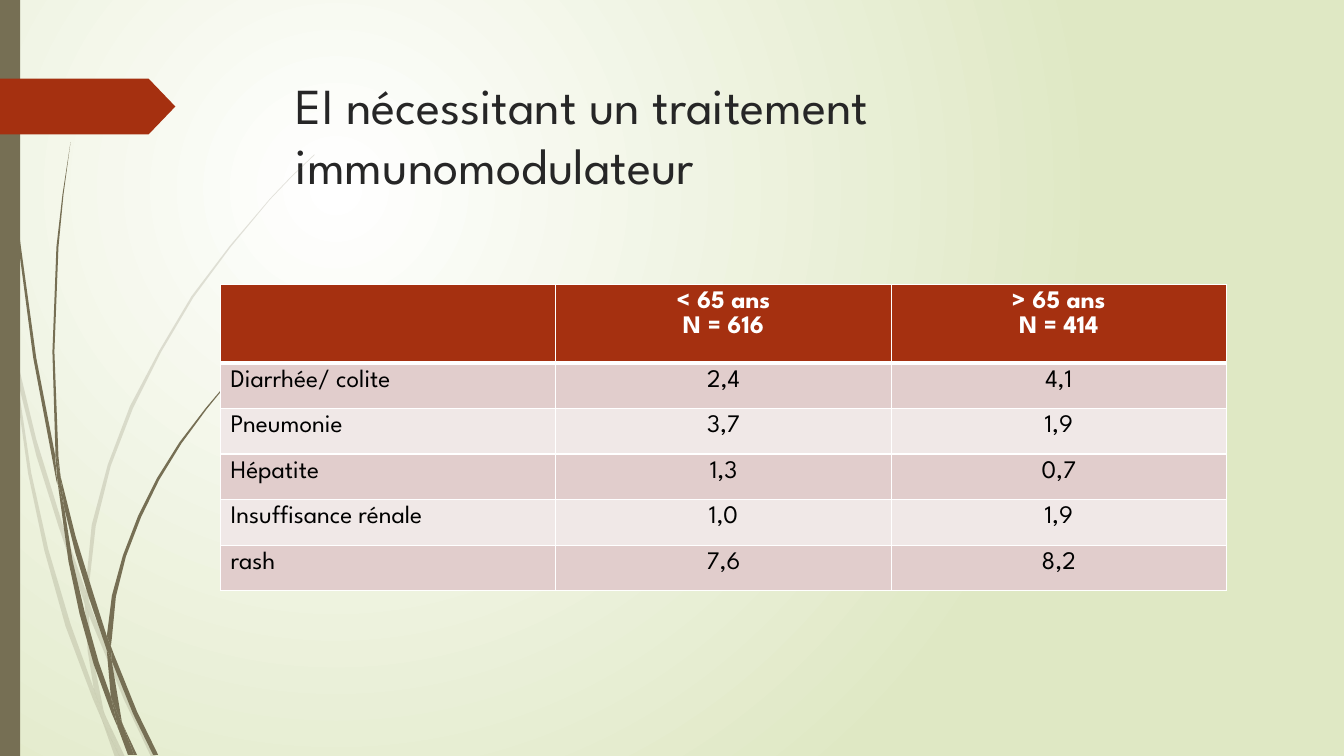
from dataclasses import dataclass

from lxml.etree import SubElement
from pptx import Presentation
from pptx.dml.color import RGBColor
from pptx.enum.shapes import MSO_SHAPE
from pptx.enum.text import MSO_ANCHOR, PP_ALIGN
from pptx.oxml.ns import qn
from pptx.util import Cm, Pt

FONT = "League Spartan"
OLIVE, RUST, WHITE, BLACK = "766F54", "A53010", "FFFFFF", "000000"
BANDS = ("E1CDCC", "F0E8E7")
GRID = 2.54  # centimetres per unit of the grass outlines


@dataclass
class Grass:
    """Tuft of blades; each blade is a closed outline of x, y points."""
    opacity: int
    blades: list[list[tuple[float, float]]]


PALE_GRASS = Grass(20, [
    [(.11, 3.5), (.09, 3.22), (0, 2.82), (0, 2.99), (.1, 3.44)],
    [(.58, 5.22), (.84, 5.99), (.85, 5.86), (.62, 5.2), (.36, 4.36), (.14, 3.45),
     (.17, 3.76), (.36, 4.52)],
    [(.92, 6.07), (.88, 5.96), (.88, 6.1), (1.23, 6.94), (1.5, 7.51), (1.55, 7.51),
     (1.27, 6.92)],
    [(1.19, 7.51), (1.24, 7.51), (1.05, 7.11)],
    [(.93, 6.83), (.7, 6.19), (.48, 5.45), (.31, 4.69), (.17, 3.76), (.11, 3.5),
     (.28, 4.7), (.44, 5.46), (.65, 6.21), (.92, 6.93), (1.01, 7.14), (.99, 7.07)],
    [(.84, 5.99), (.87, 6.46), (.93, 6.83), (.96, 6.92), (1.05, 7.11), (1.03, 7.06),
     (.91, 6.46), (.88, 6.1), (.88, 6.08)],
    [(.88, 5.84), (.95, 5.22), (1.1, 4.62), (1.32, 4.05), (1.6, 3.49), (1.92, 2.95),
     (2.29, 2.45), (2.68, 1.98), (2.9, 1.75), (3.12, 1.54), (3.12, 1.53), (2.89, 1.75),
     (2.68, 1.97), (2.28, 2.44), (1.9, 2.94), (1.58, 3.48), (1.29, 4.03), (1.07, 4.61),
     (.91, 5.21), (.85, 5.84), (.85, 5.86), (.88, 5.96)],
    [(1.01, 7.14), (1.14, 7.51), (1.19, 7.51)],
    [(.88, 6.08), (.88, 6.1), (.88, 5.96), (.85, 5.86), (.84, 5.99)],
    [(.96, 6.92), (.93, 6.83), (.99, 7.07), (1.01, 7.14), (1.19, 7.51), (1.05, 7.11)],
])

DARK_GRASS = Grass(100, [
    [(.07, 1.1), (.17, 2.33), (.33, 3.55), (.56, 4.77), (.57, 4.81), (.55, 4.57),
     (.55, 4.53), (.36, 3.55), (.19, 2.32), (.08, 1.09), (.05, .48), (.04, 0),
     (.03, 0), (.04, .48)],
    [(.88, 5.92), (1.06, 6.45), (1.06, 6.31), (.93, 5.9), (.75, 5.32), (.6, 4.72),
     (.64, 5.05), (.75, 5.49)],
    [(1.13, 6.49), (1.1, 6.41), (1.11, 6.56), (1.32, 7.08), (1.52, 7.49), (1.57, 7.49),
     (1.36, 7.06)],
    [(1.1, 6.91), (.98, 6.57), (.84, 6.07), (.72, 5.56), (.64, 5.05), (.57, 4.77),
     (.68, 5.57), (.79, 6.09), (.93, 6.59), (1.11, 7.08), (1.17, 7.22), (1.16, 7.17)],
    [(.6, 4.72), (.58, 4.53), (.54, 3.49), (.58, 2.45), (.63, 1.93), (.7, 1.41),
     (.62, 1.93), (.56, 2.45), (.52, 3.49), (.55, 4.49)],
    [(1.33, 7.49), (1.36, 7.49), (1.22, 7.19)],
    [(.57, 4.77), (.64, 5.05), (.6, 4.72), (.55, 4.49), (.55, 4.53)],
    [(1.11, 6.33), (1.15, 5.92), (1.25, 5.52), (1.4, 5.13), (1.58, 4.76), (1.8, 4.4),
     (2.05, 4.06), (2.31, 3.74), (2.45, 3.59), (2.61, 3.44), (2.6, 3.44), (2.45, 3.58),
     (2.31, 3.73), (2.04, 4.05), (1.78, 4.39), (1.56, 4.74), (1.37, 5.12), (1.22, 5.51),
     (1.11, 5.91), (1.06, 6.31), (1.1, 6.41)],
    [(1.17, 7.22), (1.27, 7.49), (1.31, 7.49)],
    [(1.06, 6.45), (1.1, 6.91), (1.16, 7.06), (1.22, 7.19), (1.21, 7.16), (1.11, 6.56),
     (1.09, 6.51)],
    [(1.06, 6.45), (1.09, 6.51), (1.11, 6.56), (1.1, 6.41), (1.06, 6.31)],
    [(1.16, 7.06), (1.1, 6.91), (1.16, 7.17), (1.17, 7.22), (1.3, 7.49), (1.33, 7.49),
     (1.22, 7.19)],
])

ADVERSE_EVENTS = [
    ("", "< 65 ans\nN = 616", "> 65 ans\nN = 414"),
    ("Diarrhée/ colite", "2,4", "4,1"),
    ("Pneumonie", "3,7", "1,9"),
    ("Hépatite", "1,3", "0,7"),
    ("Insuffisance rénale", "1,0", "1,9"),
    ("rash", "7,6", "8,2"),
]


def rgb(code: str) -> RGBColor:
    return RGBColor.from_string(code)


def paint(shape, color: str, opacity: int = 100) -> None:
    """Give a shape a flat fill without line or shadow."""
    shape.shadow.inherit = False
    shape.line.fill.background()
    shape.fill.solid()
    shape.fill.fore_color.rgb = rgb(color)
    if opacity < 100:
        tint = shape.element.spPr.find(qn("a:solidFill"))[0]
        SubElement(tint, qn("a:alpha"), val=str(opacity * 1000))


def format_runs(paragraph, size: int, color: str, bold: bool = False) -> None:
    for run in paragraph.runs:
        run.font.name, run.font.size, run.font.bold = FONT, Pt(size), bold
        run.font.color.rgb = rgb(color)


def draw_grass(slide, grass: Grass) -> None:
    for blade in grass.blades:
        outline = [(Cm(x * GRID), Cm(y * GRID)) for x, y in blade]
        builder = slide.shapes.build_freeform(*outline[0])
        builder.add_line_segments(outline[1:], close=True)
        paint(builder.convert_to_shape(), OLIVE, grass.opacity)


def fill_background(slide) -> None:
    fill = slide.background.fill
    fill.gradient()
    for stop, color, position in zip(fill.gradient_stops, (WHITE, "DFE8C4"), (0, 1)):
        stop.color.rgb, stop.position = rgb(color), position
    gradient = slide.element.find(".//" + qn("a:gradFill"))
    gradient.remove(gradient.find(qn("a:lin")))
    circle = SubElement(gradient, qn("a:path"), {"path": "circle"})
    SubElement(circle, qn("a:fillToRect"), l="50000", t="50000", r="100000", b="100000")


def draw_borders(cell, bottom: float) -> None:
    properties = cell._tc.get_or_add_tcPr()
    for side, width in (("L", 1), ("R", 1), ("T", 1), ("B", bottom)):
        line = SubElement(properties, qn(f"a:ln{side}"), w=str(Pt(width)))
        SubElement(SubElement(line, qn("a:solidFill")), qn("a:srgbClr"), val=WHITE)


def add_event_table(slide) -> None:
    rows, columns = len(ADVERSE_EVENTS), len(ADVERSE_EVENTS[0])
    table = slide.shapes.add_table(
        rows, columns, Cm(5.56), Cm(7.17), Cm(25.35), Cm(7.7)).table
    table.first_row = table.horz_banding = False
    for column in table.columns:
        column.width = Cm(8.45)
    for r, values in enumerate(ADVERSE_EVENTS):
        header = r == 0
        table.rows[r].height = Cm(1.97 if header else 1.15)
        for c, value in enumerate(values):
            cell = table.cell(r, c)
            draw_borders(cell, 3 if header else 1)
            cell.fill.solid()
            cell.fill.fore_color.rgb = rgb(RUST if header else BANDS[(r - 1) % 2])
            cell.text_frame.text = value
            for paragraph in cell.text_frame.paragraphs:
                paragraph.alignment = PP_ALIGN.CENTER if c else PP_ALIGN.LEFT
                paragraph.line_spacing = 1.07
                format_runs(paragraph, 18, WHITE if header else BLACK, header)


def add_title(slide) -> None:
    title = slide.shapes.title
    title.left, title.top, title.width, title.height = (
        Cm(7.2), Cm(1.73), Cm(24.77), Cm(3.56))
    frame = title.text_frame
    frame.text = "EI nécessitant un traitement immunomodulateur"
    frame.word_wrap = True
    frame.vertical_anchor = MSO_ANCHOR.TOP
    frame.paragraphs[0].alignment = PP_ALIGN.LEFT
    format_runs(frame.paragraphs[0], 36, "262626")


def main() -> None:
    deck = Presentation()
    deck.slide_width, deck.slide_height = Cm(33.87), Cm(19.05)
    slide = deck.slides.add_slide(deck.slide_layouts[5])
    fill_background(slide)
    for grass in (PALE_GRASS, DARK_GRASS):
        draw_grass(slide, grass)
    side_bar = slide.shapes.add_shape(
        MSO_SHAPE.RECTANGLE, 0, 0, Cm(0.51), deck.slide_height)
    paint(side_bar, OLIVE)
    page_tag = slide.shapes.add_shape(
        MSO_SHAPE.PENTAGON, 0, Cm(1.98), Cm(4.42), Cm(1.41))
    page_tag.adjustments[0] = 0.48
    paint(page_tag, RUST)
    add_title(slide)
    add_event_table(slide)
    deck.save("out.pptx")


if __name__ == "__main__":
    main()
